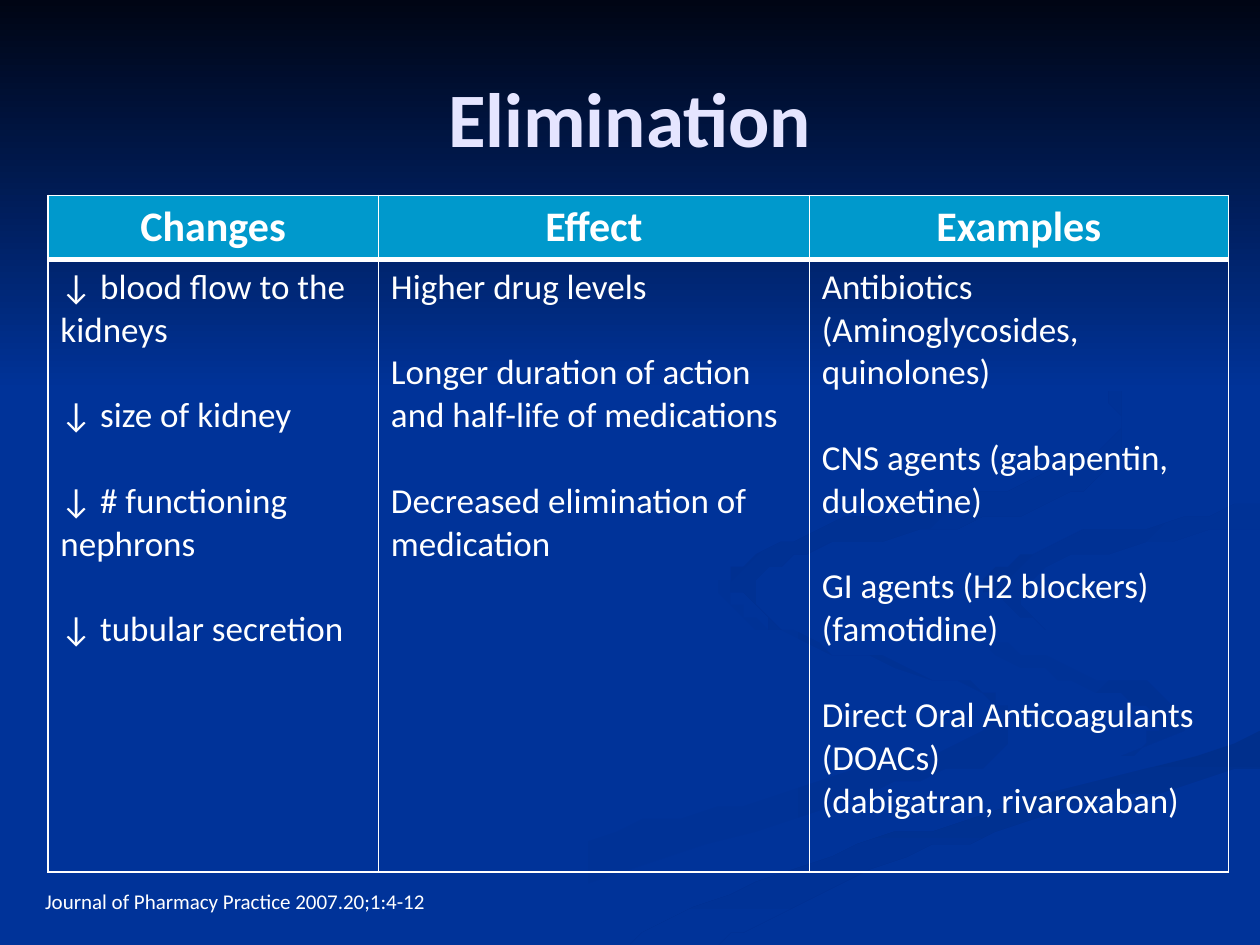
from dataclasses import dataclass

from lxml.etree import SubElement
from pptx import Presentation
from pptx.dml.color import RGBColor
from pptx.enum.text import MSO_ANCHOR as Anchor, PP_ALIGN as Align
from pptx.oxml.ns import qn
from pptx.util import Emu, Inches, Pt

# The slide is a grid of 100 columns by 75 rows
MODULE = Inches(0.1)
COLUMNS, ROWS = 100, 75
FONT = "Calibri"
BLUE, WHITE, HEADER, TITLE = "003399", "FFFFFF", "0099CC", "E5E5FF"
BLANK_LINE = 24.4  # height of one 20 pt line, in points
CURVE_STEPS = 6

Point = tuple[float, float]


@dataclass
class Ribbon:
    colours: tuple[str, str]
    angle: int
    edges: list[list[Point]]  # smooth curves, joined end to end


@dataclass
class Column:
    share: float
    heading: str
    groups: list[str]  # lines of one group are separate paragraphs


RIBBONS = [
    Ribbon((BLUE, "003193"), 0, [
        [(57.5, 46), (59, 49), (68, 52), (78, 55), (78, 58), (62, 63), (46, 67), (30, 75)],
        [(36, 75), (50, 69), (69, 63), (79, 60), (78, 55), (64, 51), (58, 48), (57.5, 46)]]),
    Ribbon((BLUE, "003193"), 45, [
        [(72.4, 46.4), (75, 50), (84, 54), (91, 56), (91, 59), (89, 60.5)],
        [(94, 58), (92, 55), (81, 52), (74, 49), (72.4, 46.4)]]),
    Ribbon(("002F8C", BLUE), 90, [
        [(50, 75), (63, 69), (80, 64), (COLUMNS, 58)],
        [(COLUMNS, 61), (82, 65), (67, 70), (57, 75)]]),
    Ribbon(("003091", BLUE), 45, [
        [(82.6, 49.6), (81, 47), (86, 44), (COLUMNS, 42)],
        [(COLUMNS, 40), (86, 42.5), (78, 46), (82.6, 49.6)]]),
    Ribbon(("002F8E", BLUE), 45, [
        [(76, 23), (86, 29), (89, 35), (83, 40), (68, 43), (60, 46), (62, 50)],
        [(62, 50), (58, 46), (65, 42), (82, 38), (89, 33), (85, 28), (76, 23)]]),
    # Dark band fading down from the top edge
    Ribbon(("000514", BLUE), 90, [[(0, 0), (0, 31)], [(COLUMNS, 31), (COLUMNS, 0)]]),
]

TABLE_COLUMNS = [
    Column(0.28, "Changes", [
        "↓ blood flow to the kidneys", "↓ size of kidney",
        "↓ # functioning nephrons", "↓ tubular secretion"]),
    Column(0.365, "Effect", [
        "Higher drug levels",
        "Longer duration of action and half-life of medications",
        "Decreased elimination of medication"]),
    Column(0.355, "Examples", [
        "Antibiotics (Aminoglycosides,\nquinolones)",
        "CNS agents (gabapentin, duloxetine)",
        "GI agents (H2 blockers) (famotidine)",
        "Direct Oral Anticoagulants (DOACs)\n(dabigatran, rivaroxaban)"]),
]


def grid(*counts: float) -> list[Emu]:
    return [Emu(round(count * MODULE)) for count in counts]


def colour(value: str) -> RGBColor:
    return RGBColor.from_string(value)


def add_run(paragraph, text: str, size: float, value: str = WHITE, bold: bool = False) -> None:
    run = paragraph.add_run()
    run.text = text
    run.font.name, run.font.size, run.font.bold = FONT, Pt(size), bold
    run.font.color.rgb = colour(value)


def smooth(points: list[Point]) -> list[Point]:
    """Catmull-Rom curve through the points."""
    padded = [points[0], *points, points[-1]]
    curve = [points[0]]
    for before, start, end, after in zip(padded, padded[1:], padded[2:], padded[3:]):
        for step in range(1, CURVE_STEPS + 1):
            t = step / CURVE_STEPS
            curve.append(tuple(
                b + ((c - a) * t + (2 * a - 5 * b + 4 * c - d) * t ** 2
                     + (3 * b - a - 3 * c + d) * t ** 3) / 2
                for a, b, c, d in zip(before, start, end, after)))
    return curve


def draw_ribbon(slide, ribbon: Ribbon) -> None:
    start, *others = [point for edge in ribbon.edges for point in smooth(edge)]
    builder = slide.shapes.build_freeform(*start, scale=MODULE)
    builder.add_line_segments(others, close=True)
    shape = builder.convert_to_shape()
    shape.shadow.inherit = False
    shape.line.fill.background()
    shape.fill.gradient()
    shape.fill.gradient_angle = (360 - ribbon.angle) % 360
    for stop, value in zip(shape.fill.gradient_stops, ribbon.colours):
        stop.color.rgb = colour(value)


def set_borders(cell, top: float, bottom: float) -> None:
    properties = cell._tc.get_or_add_tcPr()
    widths = {"a:lnL": 1, "a:lnR": 1, "a:lnT": top, "a:lnB": bottom}
    for position, (tag, width) in enumerate(widths.items()):
        line = SubElement(properties, qn(tag), w=str(Pt(width)))
        fill = SubElement(line, qn("a:solidFill"))
        SubElement(fill, qn("a:srgbClr"), val=WHITE)
        properties.insert(position, line)


def fill_column(table, index: int, column: Column) -> None:
    header, body = table.cell(0, index), table.cell(1, index)
    header.fill.solid()
    header.fill.fore_color.rgb = colour(HEADER)
    set_borders(header, top=1, bottom=3)
    heading = header.text_frame.paragraphs[0]
    heading.alignment = Align.CENTER
    add_run(heading, column.heading, 24, bold=True)

    body.fill.background()
    set_borders(body, top=3, bottom=1)
    paragraph = body.text_frame.paragraphs[0]
    for group_number, group in enumerate(column.groups):
        for line_number, text in enumerate(group.split("\n")):
            if group_number or line_number:
                paragraph = body.text_frame.add_paragraph()
            if group_number and not line_number:
                paragraph.space_before = Pt(BLANK_LINE)
            add_run(paragraph, text, 20)


def add_table(slide) -> None:
    left, top, width, header_height, body_height = grid(3.8, 15.5, 93.7, 5.1, 48.6)
    frame = slide.shapes.add_table(
        2, len(TABLE_COLUMNS), left, top, width, header_height + body_height)
    table = frame.table
    table.horz_banding = False
    table.rows[0].height, table.rows[1].height = header_height, body_height
    for index, column in enumerate(TABLE_COLUMNS):
        table.columns[index].width = Emu(round(width * column.share))
        fill_column(table, index, column)


def main() -> None:
    presentation = Presentation()
    presentation.slide_width, presentation.slide_height = grid(COLUMNS, ROWS)
    slide = presentation.slides.add_slide(presentation.slide_layouts[5])

    # Background
    slide.background.fill.solid()
    slide.background.fill.fore_color.rgb = colour(BLUE)
    for ribbon in RIBBONS:
        draw_ribbon(slide, ribbon)

    # Title, brought in front of the background
    title = slide.shapes.title
    title.element.getparent().append(title.element)
    title.left, title.top, title.width, title.height = grid(5, 3, 90, 12.5)
    title.text_frame.vertical_anchor = Anchor.MIDDLE
    heading = title.text_frame.paragraphs[0]
    heading.alignment = Align.CENTER
    add_run(heading, "Elimination", 44, TITLE, bold=True)

    add_table(slide)

    # Source line
    source = slide.shapes.add_textbox(*grid(2.6, 70, 32.6, 3))
    source.text_frame.word_wrap = False
    add_run(source.text_frame.paragraphs[0], "Journal of Pharmacy Practice 2007.20;1:4-12", 12)

    presentation.save("out.pptx")


if __name__ == "__main__":
    main()
